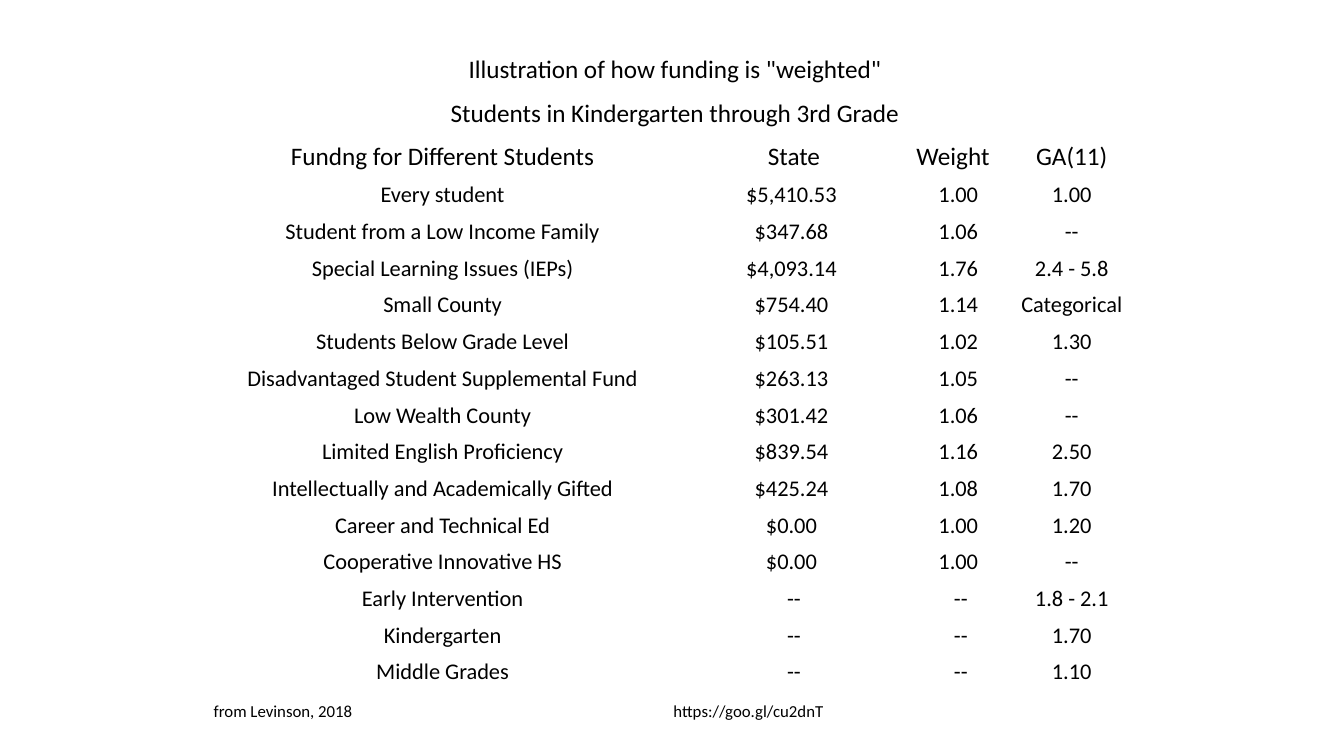
"""Build a slide that tabulates how school funding is weighted by student group."""
import pptx
import pptx.dml.color
import pptx.enum.text
import pptx.util

Inches = pptx.util.Inches
ALIGN = pptx.enum.text.PP_ALIGN

TITLES = ['Illustration of how funding is "weighted"',
          "Students in Kindergarten through 3rd Grade"]
HEADINGS = ["Fundng for Different Students", "State", "Weight", "GA(11)"]
FUNDING = [
    ["Every student", "$5,410.53 ", "1.00 ", "1.00"],
    ["Student from a Low Income Family", "$347.68 ", "1.06 ", "--"],
    ["Special Learning Issues (IEPs)", "$4,093.14 ", "1.76 ", "2.4 - 5.8"],
    ["Small County", "$754.40 ", "1.14 ", "Categorical"],
    ["Students Below Grade Level", "$105.51 ", "1.02 ", "1.30"],
    ["Disadvantaged Student Supplemental Fund", "$263.13 ", "1.05 ", "--"],
    ["Low Wealth County", "$301.42 ", "1.06 ", "--"],
    ["Limited English Proficiency", "$839.54 ", "1.16 ", "2.50"],
    ["Intellectually and Academically Gifted", "$425.24 ", "1.08 ", "1.70"],
    ["Career and Technical Ed", "$0.00 ", "1.00 ", "1.20"],
    ["Cooperative Innovative HS", "$0.00 ", "1.00 ", "--"],
    ["Early Intervention", "--", "--", "1.8 - 2.1"],
    ["Kindergarten", "--", "--", "1.70"],
    ["Middle Grades", "--", "--", "1.10"],
]
SOURCE = ["from Levinson, 2018", "https://goo.gl/cu2dnT", "", ""]
COLUMN_WIDTHS = [4.56, 2.41, 0.9, 1.3]
HEADING_HEIGHT = 0.43


def color(value):
    """Return the colour for a hex string."""
    return pptx.dml.color.RGBColor.from_string(value)


def write_cell(cell, text, size, alignment):
    """Write one unfilled, bottom-anchored cell."""
    cell.fill.background()
    cell.vertical_anchor = pptx.enum.text.MSO_ANCHOR.BOTTOM
    cell.margin_left = cell.margin_right = cell.margin_top = Inches(0.01)
    cell.margin_bottom = 0
    cell.text_frame.text = text
    paragraph = cell.text_frame.paragraphs[0]
    paragraph.alignment = alignment
    for font in [paragraph.font] + [run.font for run in paragraph.runs]:
        font.name = "Calibri"
        font.size = pptx.util.Pt(size)
        font.color.rgb = color("000000")


def add_funding_table(slide, left, top, width, height):
    """Place the funding table, with its titles and source row, in the given box."""
    title_rows = [[title, "", "", ""] for title in TITLES]
    rows = title_rows + [HEADINGS] + FUNDING + [SOURCE]
    heading_count = len(title_rows) + 1
    body_height = (height - heading_count * HEADING_HEIGHT) / (len(rows) - heading_count)
    table = slide.shapes.add_table(len(rows), len(HEADINGS), Inches(left), Inches(top),
                                   Inches(width), Inches(height)).table
    table.first_row = table.horz_banding = False
    for column, share in zip(table.columns, COLUMN_WIDTHS):
        column.width = Inches(width * share / sum(COLUMN_WIDTHS))
    for row_index, texts in enumerate(rows):
        is_heading = row_index < heading_count
        is_source = texts is SOURCE
        size = 18 if is_heading else 12 if is_source else 16
        table.rows[row_index].height = Inches(HEADING_HEIGHT if is_heading else body_height)
        for column_index, text in enumerate(texts):
            alignment = ALIGN.LEFT if is_source or text == "Weight" else ALIGN.CENTER
            write_cell(table.cell(row_index, column_index), text, size, alignment)
    for row_index in range(len(title_rows)):
        table.cell(row_index, 0).merge(table.cell(row_index, len(HEADINGS) - 1))


def main():
    """Create and save the presentation."""
    presentation = pptx.Presentation()
    presentation.slide_width = Inches(13.33)
    presentation.slide_height = Inches(7.5)
    slide = presentation.slides.add_slide(presentation.slide_layouts[6])
    add_funding_table(slide, 2.11, 0.42, 9.17, 6.75)
    presentation.save("out.pptx")


if __name__ == "__main__":
    main()
